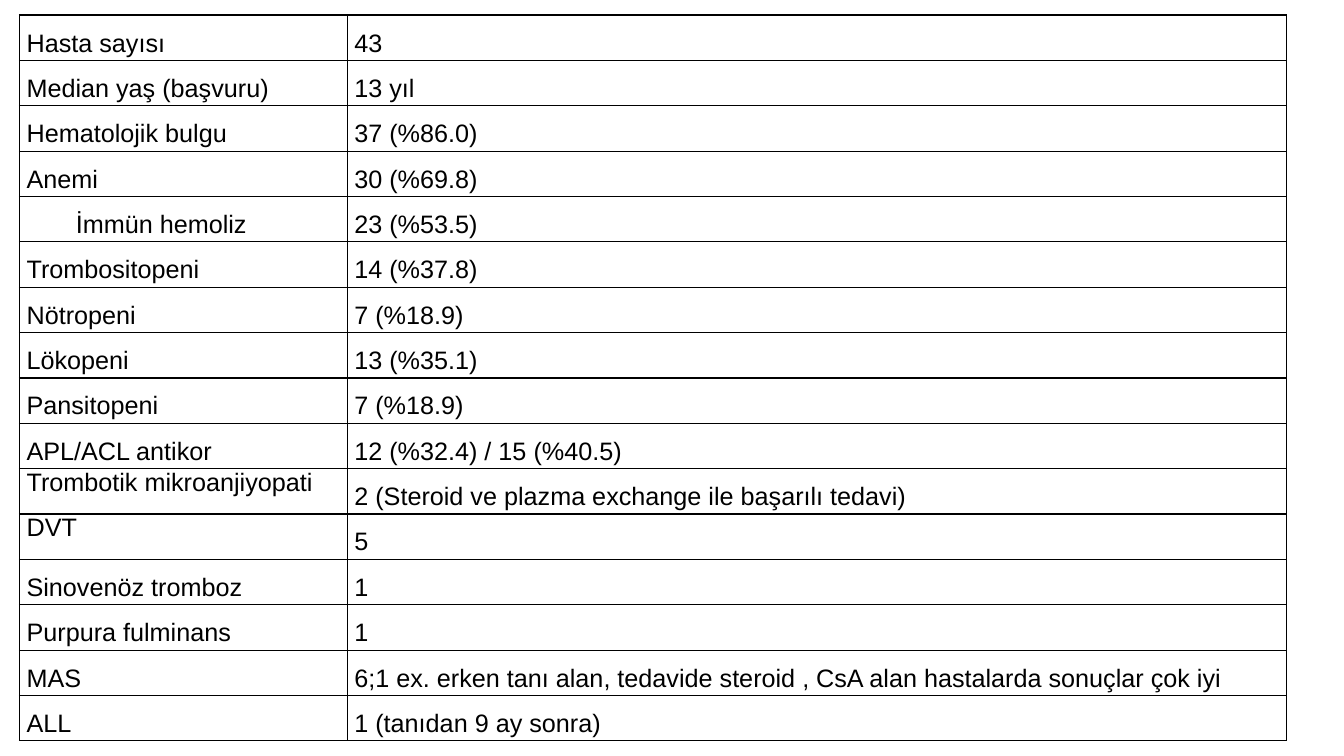
from lxml import etree
from pptx import Presentation
from pptx import util as u
from pptx.dml import color
from pptx.oxml import ns

FINDINGS = [
    ("Hasta sayısı", "43"),
    ("Median yaş (başvuru)", "13 yıl"),
    ("Hematolojik bulgu", "37 (%86.0)"),
    ("Anemi", "30 (%69.8)"),
    ("İmmün hemoliz", "23 (%53.5)"),
    ("Trombositopeni", "14 (%37.8)"),
    ("Nötropeni", "7 (%18.9)"),
    ("Lökopeni", "13 (%35.1)"),
    ("Pansitopeni", "7 (%18.9)"),
    ("APL/ACL antikor", "12 (%32.4) / 15 (%40.5)"),
    ("Trombotik mikroanjiyopati",
     "2 (Steroid ve plazma exchange ile başarılı tedavi)"),
    ("DVT", "5"),
    ("Sinovenöz tromboz", "1"),
    ("Purpura fulminans", "1"),
    ("MAS", "6;1 ex. erken tanı alan, tedavide steroid , CsA alan "
            "hastalarda sonuçlar çok iyi"),
    ("ALL", "1 (tanıdan 9 ay sonra)"),
]
SUBFINDINGS = {"İmmün hemoliz"}
SINGLE_SPACED = {"Trombotik mikroanjiyopati", "DVT"}
COLUMN_WIDTHS = (8.26, 23.67)
TABLE_HEIGHT = 18.29
INK = "000000"
PAPER = "FFFFFF"


def rgb(hex_code):
    """Turn a hex string into a colour."""
    return color.RGBColor.from_string(hex_code)


def write(frame, wording, size=18, font="Arial", ink=INK, spacing=1.5):
    """Put formatted wording into a text frame."""
    paragraph = frame.paragraphs[0]
    paragraph.line_spacing = spacing
    run = paragraph.add_run()
    run.text = wording
    run.font.size = u.Pt(size)
    run.font.name = font
    run.font.color.rgb = rgb(ink)


def rule_cell(cell, ink=INK, width=1):
    """Draw a line along all four sides of a cell."""
    properties = cell._tc.get_or_add_tcPr()
    for side in ("a:lnL", "a:lnR", "a:lnT", "a:lnB"):
        line = etree.SubElement(properties, ns.qn(side), w=str(u.Pt(width)))
        fill = etree.SubElement(line, ns.qn("a:solidFill"))
        etree.SubElement(fill, ns.qn("a:srgbClr"), val=ink)


def fill_cell(cell, wording):
    """Give a cell its borders, background, margins and wording."""
    rule_cell(cell)
    cell.fill.solid()
    cell.fill.fore_color.rgb = rgb(PAPER)
    cell.margin_left = u.Cm(1.42 if wording in SUBFINDINGS else 0.18)
    cell.margin_right = u.Cm(0.18)
    cell.margin_top = cell.margin_bottom = 0
    spacing = 1.0 if wording in SINGLE_SPACED else 1.5
    write(cell.text_frame, wording, spacing=spacing)


def add_findings_table(slide):
    """Lay out the findings, one a row, with their counts."""
    findings_table = slide.shapes.add_table(
        len(FINDINGS), len(COLUMN_WIDTHS), u.Cm(0.49), u.Cm(0.38),
        u.Cm(sum(COLUMN_WIDTHS)), u.Cm(TABLE_HEIGHT)).table
    findings_table.first_row = False
    findings_table.horz_banding = False
    for column, width in zip(findings_table.columns, COLUMN_WIDTHS):
        column.width = u.Cm(width)
    for row, finding in zip(findings_table.rows, FINDINGS):
        for cell, wording in zip(row.cells, finding):
            fill_cell(cell, wording)


def main():
    """Build the slide and save it."""
    deck = Presentation()
    deck.slide_width = u.Cm(33.87)
    deck.slide_height = u.Cm(19.05)
    slide = deck.slides.add_slide(deck.slide_layouts[6])
    add_findings_table(slide)
    deck.save("out.pptx")


if __name__ == "__main__":
    main()
